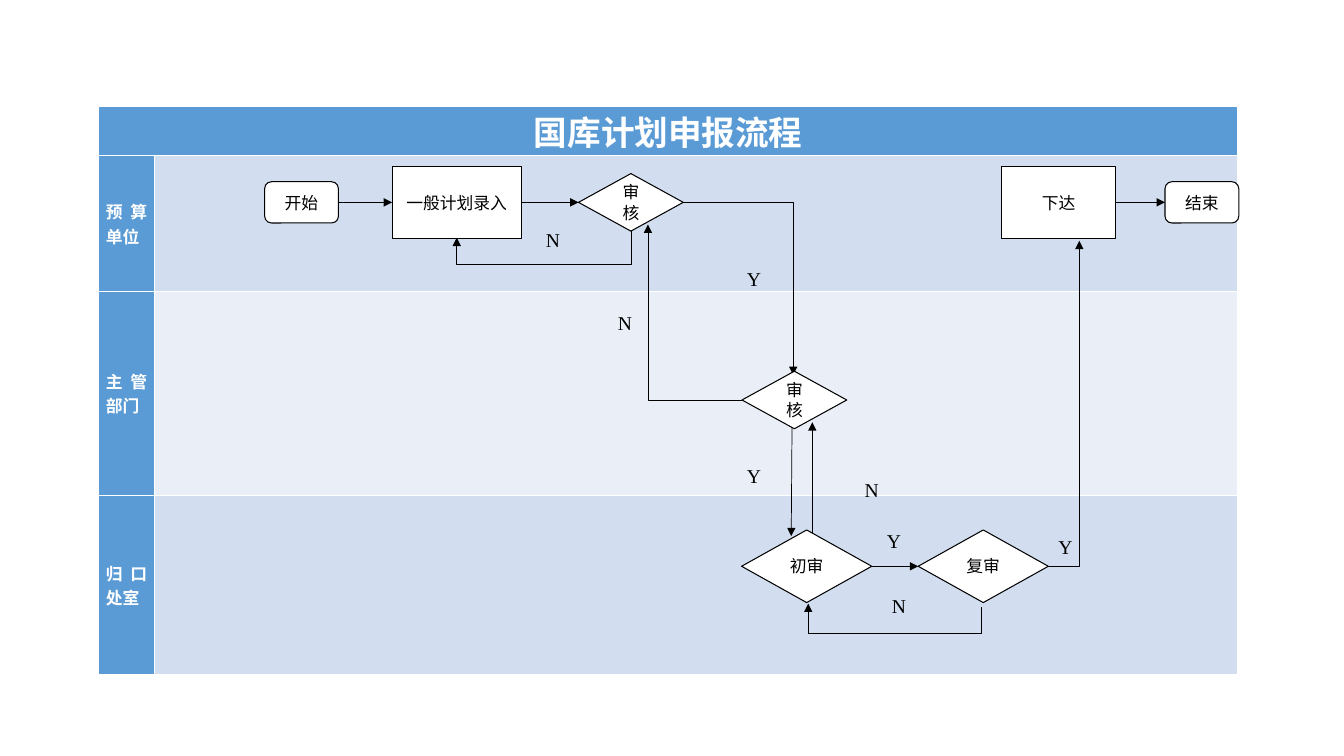
from lxml import etree
from pptx import Presentation
from pptx.dml.color import RGBColor
from pptx.enum import shapes, text
from pptx.oxml import ns
from pptx.util import Cm, Pt

BLACK = RGBColor(0x00, 0x00, 0x00)
WHITE = RGBColor(0xFF, 0xFF, 0xFF)
BLUE = RGBColor(0x5B, 0x9B, 0xD5)
LANE_DARK = RGBColor(0xD2, 0xDE, 0xEF)
LANE_LIGHT = RGBColor(0xEA, 0xEF, 0xF7)

ROUNDED = shapes.MSO_SHAPE.FLOWCHART_ALTERNATE_PROCESS
DIAMOND = shapes.MSO_SHAPE.DIAMOND
BOX = shapes.MSO_SHAPE.RECTANGLE
STRAIGHT = shapes.MSO_CONNECTOR.STRAIGHT
ELBOW = shapes.MSO_CONNECTOR.ELBOW

# Centre heights of the three rows of steps, in cm
UNIT_Y, DEPT_Y, OFFICE_Y = 5.1, 10.08, 14.27


class FlowSlide:
    font = "Times New Roman"
    table_font = "Calibri"

    def __init__(self, s):
        self.s = s

    def set_text(self, tf, words, size, align, font=None, color=BLACK, bold=False):
        tf.word_wrap = True
        p = tf.paragraphs[0]
        p.text = words
        p.alignment = align
        p.font.name = font or self.font
        p.font.size = Pt(size)
        p.font.bold = bold
        p.font.color.rgb = color

    def cell(self, cell, fill, words="", size=12, align=text.PP_ALIGN.JUSTIFY):
        cell.fill.solid()
        cell.fill.fore_color.rgb = fill
        cell.margin_left = cell.margin_right = Cm(0.18)
        cell.margin_top = cell.margin_bottom = 0
        if words:
            self.set_text(cell.text_frame, words, size, align, self.table_font, WHITE, True)

    def lanes(self, title, lanes):
        """Draw the swimlane table from (name, height, fill) rows."""
        frame = self.s.shapes.add_table(len(lanes) + 1, 2, Cm(2.49), Cm(2.69), Cm(28.7), Cm(14.27))
        table = frame.table
        table.first_col = True
        table.columns[0].width, table.columns[1].width = Cm(1.4), Cm(27.3)
        table.rows[0].height = Cm(1.19)
        table.cell(0, 0).merge(table.cell(0, 1))
        self.cell(table.cell(0, 0), BLUE, title, 24, text.PP_ALIGN.CENTER)
        for i, (name, height, fill) in enumerate(lanes, 1):
            table.rows[i].height = Cm(height)
            head = table.cell(i, 0)
            self.cell(head, BLUE, name)
            head.vertical_anchor = text.MSO_ANCHOR.MIDDLE
            head._tc.get_or_add_tcPr().set("vert", "eaVert")
            self.cell(table.cell(i, 1), fill)

    def step(self, kind, words, x, y, w, h):
        """Draw a step centred on (x, y)."""
        sp = self.s.shapes.add_shape(kind, Cm(x - w / 2), Cm(y - h / 2), Cm(w), Cm(h))
        sp.shadow.inherit = False
        sp.fill.solid()
        sp.fill.fore_color.rgb = WHITE
        sp.line.color.rgb = BLACK
        sp.line.width = Pt(0.75)
        sp.text_frame.vertical_anchor = text.MSO_ANCHOR.MIDDLE
        self.set_text(sp.text_frame, words, 12, text.PP_ALIGN.CENTER)

    def answer(self, words, x, y):
        tb = self.s.shapes.add_textbox(Cm(x), Cm(y), Cm(0.9), Cm(0.86))
        self.set_text(tb.text_frame, words, 14, text.PP_ALIGN.LEFT)

    def arrow(self, x1, y1, x2, y2, kind=STRAIGHT, width=0.75):
        c = self.s.shapes.add_connector(kind, Cm(x1), Cm(y1), Cm(x2), Cm(y2))
        c.line.color.rgb = BLACK
        c.line.width = Pt(width)
        spPr = c._element.spPr
        etree.SubElement(spPr.find(ns.qn("a:ln")), ns.qn("a:tailEnd"), type="triangle")
        etree.SubElement(spPr, ns.qn("a:effectLst"))
        return spPr

    def corner(self, x1, y1, x2, y2):
        """Draw an arrow that runs sideways, then turns once."""
        spPr = self.arrow(x1, y1, x2, y2, ELBOW, 0.5)
        spPr.find(ns.qn("a:prstGeom")).set("prst", "bentConnector2")

    def loop_back(self, x1, y1, x2, y2, drop):
        """Draw an arrow that drops below its start, runs left and rises to its end."""
        x, y = (x1 + x2) / 2, (y1 + y2) / 2
        half_w, half_h = (y2 - y1) / 2, (x1 - x2) / 2
        spPr = self.arrow(x - half_w, y - half_h, x + half_w, y + half_h, ELBOW, 0.5)
        spPr.find(ns.qn("a:xfrm")).set("rot", "5400000")
        bend = round(drop / (y2 - y1) * 100000)
        guides = spPr.find(ns.qn("a:prstGeom")).find(ns.qn("a:avLst"))
        etree.SubElement(guides, ns.qn("a:gd"), name="adj1", fmla=f"val {bend}")


def main():
    prs = Presentation()
    prs.slide_width, prs.slide_height = Cm(33.87), Cm(19.05)
    flow = FlowSlide(prs.slides.add_slide(prs.slide_layouts[6]))

    flow.lanes("国库计划申报流程", [
        ("预算单位", 3.43, LANE_DARK),
        ("主管部门", 5.13, LANE_LIGHT),
        ("归口处室", 4.52, LANE_DARK),
    ])

    for x1, x2, y in [(8.53, 9.88, UNIT_Y), (13.13, 14.58, UNIT_Y),
                      (28.12, 29.36, UNIT_Y), (21.84, 23.14, OFFICE_Y)]:
        flow.arrow(x1, y, x2, y)
    flow.arrow(19.96, 10.72, 19.94, 13.51, width=0.5)
    flow.arrow(20.47, 13.54, 20.47, 10.64)
    flow.corner(17.22, UNIT_Y, 19.99, 9.45)
    flow.corner(18.69, DEPT_Y, 16.33, 5.66)
    flow.corner(26.42, OFFICE_Y, 27.2, 6.07)
    flow.loop_back(15.9, 5.82, 11.51, 5.99, 0.84)
    flow.loop_back(24.74, 15.29, 20.37, 15.21, 0.66)

    for kind, words, x, y, w, h in [
        (ROUNDED, "开始", 7.6, UNIT_Y, 1.86, 1.04),
        (BOX, "一般计划录入", 11.51, UNIT_Y, 3.25, 1.8),
        (DIAMOND, "审核", 15.9, UNIT_Y, 2.64, 1.45),
        (BOX, "下达", 26.68, UNIT_Y, 2.87, 1.8),
        (ROUNDED, "结束", 30.29, UNIT_Y, 1.86, 1.04),
        (DIAMOND, "审核", 20.02, DEPT_Y, 2.64, 1.45),
        (DIAMOND, "初审", 20.33, OFFICE_Y, 3.28, 1.83),
        (DIAMOND, "复审", 24.78, OFFICE_Y, 3.28, 1.83),
    ]:
        flow.step(kind, words, x, y, w, h)

    for words, places in {
        "Y": [(18.57, 6.6), (18.57, 11.56), (22.1, 13.21), (26.42, 13.36)],
        "N": [(13.51, 5.61), (15.32, 7.7), (21.54, 11.91), (22.23, 14.83)],
    }.items():
        for x, y in places:
            flow.answer(words, x, y)

    prs.save("out.pptx")


if __name__ == "__main__":
    main()
